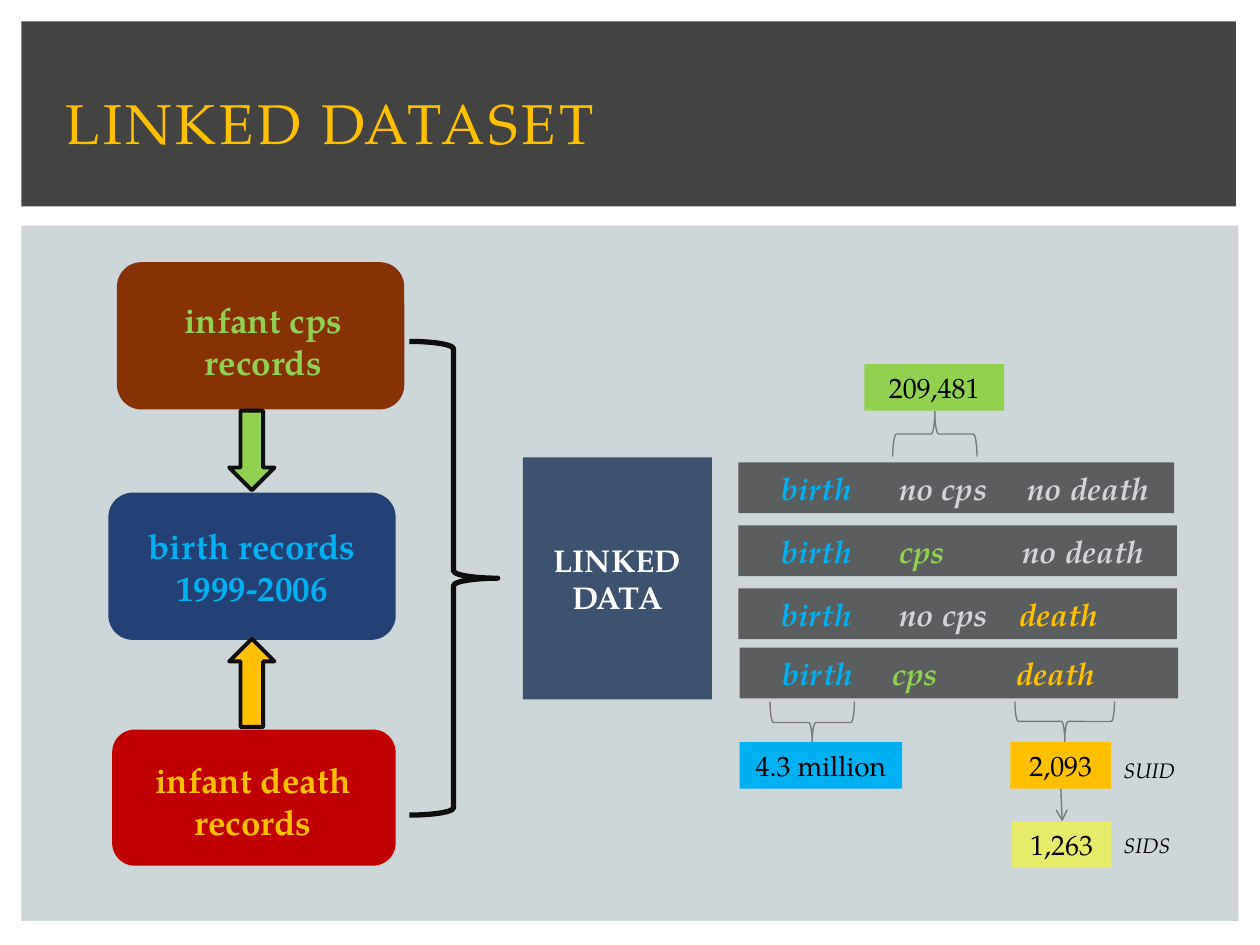
from dataclasses import dataclass

from lxml.etree import SubElement
from pptx import Presentation
from pptx.dml.color import RGBColor
from pptx.enum.shapes import MSO_CONNECTOR, MSO_SHAPE
from pptx.enum.text import MSO_ANCHOR, PP_ALIGN
from pptx.oxml.ns import qn
from pptx.util import Pt

FONT = "TeX Gyre Pagella"
COLORS = {
    "panel": "CDD7D9", "band": "434342", "amber": "FFC000", "green": "92D050",
    "sky": "00B0F0", "navy": "002060", "slate": "3C526F", "rust": "863204",
    "red": "C00000", "yellow": "FFFF00", "row": "323232", "ink": "0D0D0D",
    "gray": "797B7E", "black": "000000", "white": "FFFFFF",
}


@dataclass
class Box:
    """A rectangle in points."""
    left: float
    top: float
    width: float
    height: float

    def inner(self, left, top, width, height):
        """Return a rectangle placed relative to this one."""
        return Box(self.left + left, self.top + top, width, height)

    def lengths(self):
        """Return the four lengths for python-pptx."""
        return Pt(self.left), Pt(self.top), Pt(self.width), Pt(self.height)


def color(name):
    """Return the named colour."""
    return RGBColor.from_string(COLORS[name])


def write(paragraph, text, size, ink, bold=False, italic=False):
    """Add one formatted run."""
    run = paragraph.add_run()
    run.text = text
    font = run.font
    font.name, font.size, font.bold, font.italic = FONT, Pt(size), bold, italic
    font.color.rgb = color(ink)
    return run


def draw(slide, kind, box, fill=None, line=None, weight=0, alpha=None, rotation=0):
    """Add a preset shape with flat formatting."""
    shape = slide.shapes.add_shape(kind, *box.lengths())
    shape.shadow.inherit = False
    shape.rotation = rotation
    if fill:
        shape.fill.solid()
        shape.fill.fore_color.rgb = color(fill)
        if alpha:
            tint = shape.element.spPr.find(qn("a:solidFill"))[0]
            SubElement(tint, qn("a:alpha"), val=str(alpha * 1000))
    else:
        shape.fill.background()
    if line:
        shape.line.color.rgb = color(line)
        shape.line.width = Pt(weight)
    else:
        shape.line.fill.background()
    return shape


def caption(slide, box, lines, size, ink, align=PP_ALIGN.LEFT, **style):
    """Add a wrapped text box with one paragraph per line."""
    frame = slide.shapes.add_textbox(*box.lengths()).text_frame
    frame.word_wrap = True
    for index, text in enumerate(lines):
        paragraph = frame.add_paragraph() if index else frame.paragraphs[0]
        paragraph.alignment = align
        write(paragraph, text, size, ink, **style)


def label(shape, text, size, ink, bold=False):
    """Centre a text in a shape."""
    frame = shape.text_frame
    frame.word_wrap = True
    frame.vertical_anchor = MSO_ANCHOR.MIDDLE
    frame.paragraphs[0].alignment = PP_ALIGN.CENTER
    write(frame.paragraphs[0], text, size, ink, bold)


def heading(slide, box):
    """Draw the title band and set the title on it."""
    draw(slide, MSO_SHAPE.RECTANGLE, box, "band")
    title = slide.shapes.title
    slide.shapes.element.append(title.element)
    title.left, title.top, title.width, title.height = box.inner(18, 16, 660, 82.8).lengths()
    frame = title.text_frame
    frame.word_wrap = True
    frame.vertical_anchor = MSO_ANCHOR.MIDDLE
    frame.paragraphs[0].alignment = PP_ALIGN.LEFT
    run = write(frame.paragraphs[0], "LINKED DATASET", 32, "amber")
    run._r.get_or_add_rPr().set("spc", "200")


def sources(slide, box):
    """Draw the three record sources, their arrows and the brace."""
    records = [
        ((1.9, 136.5, 164.2, 84.2), "navy", 82, (9.1, 150.9), ["birth records", "1999-2006"], "sky"),
        ((6.8, 4.8, 164.2, 84.2), "rust", None, (15.6, 22), ["infant cps records"], "green"),
        ((4.1, 271.9, 162, 77.8), "red", None, (9.8, 284.8), ["infant death records"], "amber"),
    ]
    for place, fill, alpha, corner, lines, ink in records:
        draw(slide, MSO_SHAPE.ROUNDED_RECTANGLE, box.inner(*place), fill, alpha=alpha)
        caption(slide, box.inner(*corner, 149.8, 55.4), lines, 20, ink, PP_ALIGN.CENTER, bold=True)
    arrows = [
        (MSO_SHAPE.DOWN_ARROW, 89.7, 45.4, "green"),
        (MSO_SHAPE.UP_ARROW, 220, 50.4, "amber"),
    ]
    for kind, top, height, fill in arrows:
        draw(slide, kind, box.inner(71, top, 25.9, height), fill, "ink", 2.25)
    draw(slide, MSO_SHAPE.RIGHT_BRACE, box.inner(174, 50.1, 50.4, 270.7), None, "ink", 3)


def linked_data(slide, box):
    """Draw the block where the sources meet."""
    label(draw(slide, MSO_SHAPE.RECTANGLE, box, "slate"), "LINKED DATA", 18, "white", True)


def record_row(slide, box, words, stops):
    """Draw one linked record with its words on tab stops."""
    row = draw(slide, MSO_SHAPE.RECTANGLE, box, "row", alpha=73)
    frame = row.text_frame
    frame.word_wrap = True
    frame.vertical_anchor = MSO_ANCHOR.MIDDLE
    frame.margin_left = Pt(24.5)
    paragraph = frame.paragraphs[0]
    paragraph.alignment = PP_ALIGN.LEFT
    tabs = SubElement(paragraph._p.get_or_add_pPr(), qn("a:tabLst"))
    for stop in stops:
        SubElement(tabs, qn("a:tab"), pos=str(Pt(stop)), algn="l")
    inks = {"birth": "sky", "cps": "green", "death": "amber"}
    for index, word in enumerate(words):
        text = f"\t{word}" if index else word
        write(paragraph, text, 18, inks.get(word, "panel"), True, True)


def linked_records(slide, box):
    """Draw the record rows with their counts and braces."""
    rows = [
        (1.9, 59.2, 249.1, ("birth", "no cps", "no death"), (67.4, 140.6)),
        (1.9, 95.2, 250.6, ("birth", "cps", "no death"), (67.4, 137.7)),
        (1.9, 131.2, 250.6, ("birth", "no cps", "death"), (67.4, 136)),
        (2.6, 165.1, 250.6, ("birth", "cps", "death"), (62.9, 133.7)),
    ]
    for left, top, width, words, stops in rows:
        record_row(slide, box.inner(left, top, width, 29), words, stops)
    braces = [
        ((32.2, 183.8, 23.8, 48.2), 90),
        ((101.3, 18.9, 25.9, 48.2), 270),
        ((176.9, 178.8, 23, 56.9), 90),
    ]
    for place, rotation in braces:
        draw(slide, MSO_SHAPE.RIGHT_BRACE, box.inner(*place), None, "gray", 0.79, rotation=rotation)
    counts = [
        ((2.6, 219.1, 92.9, 26.6), "4.3 million", "sky", None),
        ((73.9, 3.1, 79.9, 26.6), "209,481", "green", None),
        ((157.4, 219.1, 57.6, 26.6), "2,093", "amber", None),
        ((158.2, 264.4, 56.9, 26.6), "1,263", "yellow", 51),
    ]
    for place, number, fill, alpha in counts:
        label(draw(slide, MSO_SHAPE.RECTANGLE, box.inner(*place), fill, alpha=alpha), number, 16, "black")
    for top, width, cause in ((267.3, 61.2, "SIDS"), (224.1, 82.8, "SUID")):
        caption(slide, box.inner(215, top, width, 21.6), [cause], 12, "black", italic=True)
    step = slide.shapes.add_connector(
        MSO_CONNECTOR.STRAIGHT, Pt(box.left + 186.2), Pt(box.top + 245.7),
        Pt(box.left + 187), Pt(box.top + 264.4))
    step.line.color.rgb = color("gray")
    step.line.width = Pt(0.79)
    SubElement(step.element.spPr.find(qn("a:ln")), qn("a:tailEnd"), type="arrow")
    SubElement(step.element.spPr, qn("a:effectLst"))


def main():
    """Build the slide and save it."""
    deck = Presentation()
    deck.slide_width, deck.slide_height = Pt(720), Pt(540)
    slide = deck.slides.add_slide(deck.slide_layouts[5])
    draw(slide, MSO_SHAPE.RECTANGLE, Box(12.2, 128.9, 695.5, 397.4), "panel")
    heading(slide, Box(12.2, 12.2, 694.1, 105.8))
    sources(slide, Box(60, 145, 230, 350))
    linked_data(slide, Box(298.8, 261.4, 108, 138.2))
    linked_records(slide, Box(420, 205, 290, 295))
    deck.save("out.pptx")


if __name__ == "__main__":
    main()
